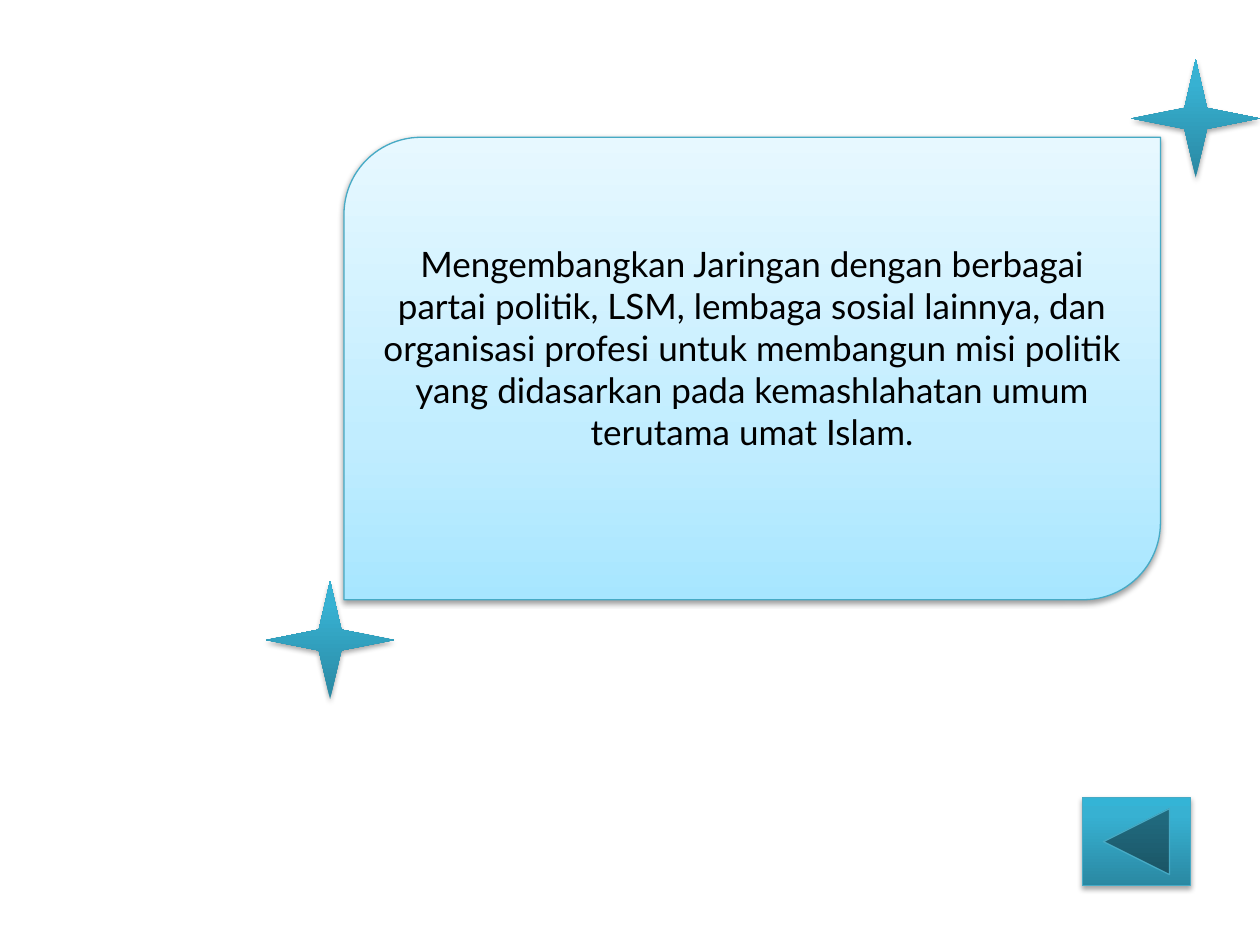
import pptx
import pptx.util
import pptx.oxml
import pptx.oxml.ns
import pptx.dml.color
import pptx.enum.shapes
import pptx.enum.text
from lxml import etree

Inches, Pt = pptx.util.Inches, pptx.util.Pt
RGB = pptx.dml.color.RGBColor.from_string
KIND = pptx.enum.shapes.MSO_SHAPE
qn = pptx.oxml.ns.qn

# Content
TEXT = (
    "Mengembangkan Jaringan dengan berbagai partai politik, LSM, "
    "lembaga sosial lainnya, dan organisasi profesi untuk membangun "
    "misi politik yang didasarkan pada kemashlahatan umum terutama "
    "umat Islam."
)
COLORS = {
    "text": "000000", "line": "46AAC5", "shadow": "000000",
    "sky": "A7E6FF", "pale": "C1EDFF", "ice": "E7F8FF",
    "deep": "2A88A2", "teal": "37B1D2", "aqua": "34B4D6",
}
# Looks: gradient stops from bottom to top, shadow opacity and distance
LIGHT = {"stops": [(0, "sky"), (35, "pale"), (100, "ice")],
         "alpha": 38, "dist": 1.6}
DARK = {"stops": [(0, "deep"), (80, "teal"), (100, "aqua")],
        "alpha": 35, "dist": 1.8}

# Kind, box (left, top, width, height), look, outlined
STAR = (1.02, 0.94)
PARTS = [
    (KIND.ROUND_2_DIAG_RECTANGLE, (2.73, 1.09, 6.48, 3.67), LIGHT, True),
    (KIND.ACTION_BUTTON_BACK_OR_PREVIOUS, (8.59, 6.33, 0.86, 0.7), DARK, True),
    (KIND.STAR_4_POINT, (2.11, 4.61, *STAR), DARK, False),
    (KIND.STAR_4_POINT, (8.98, 0.47, *STAR), DARK, False),
]


def tint(node, name, alpha=None):
    """Add a colour element, with opacity in percent if given."""
    color = etree.SubElement(node, qn("a:srgbClr"), val=COLORS[name])
    if alpha is not None:
        etree.SubElement(color, qn("a:alpha"), val=str(alpha * 1000))


def paint(shape, look):
    """Give a shape its upward gradient and its shadow below."""
    shape.fill.gradient()
    shape.fill.gradient_angle = 90
    props = shape._element.spPr
    stops = props.find(qn("a:gradFill")).find(qn("a:gsLst"))
    for old in list(stops):
        stops.remove(old)
    for pos, name in look["stops"]:
        tint(etree.SubElement(stops, qn("a:gs"), pos=str(pos * 1000)), name)

    shape.shadow.inherit = False
    shade = etree.SubElement(
        props.find(qn("a:effectLst")), qn("a:outerShdw"),
        blurRad=str(Pt(3.1)), dist=str(Pt(look["dist"])),
        dir="5400000", rotWithShape="0")
    tint(shade, "shadow", look["alpha"])


def write(shape, text):
    """Set centred text, raised by one line's height."""
    frame = shape.text_frame
    frame.word_wrap = True
    frame.vertical_anchor = pptx.enum.text.MSO_ANCHOR.MIDDLE
    frame.margin_bottom = Inches(0.38)
    para = frame.paragraphs[0]
    para.alignment = pptx.enum.text.PP_ALIGN.CENTER
    run = para.add_run()
    run.text = text
    run.font.name = "Lato"
    run.font.size = Pt(20)
    run.font.color.rgb = RGB(COLORS["text"])


def main():
    deck = pptx.Presentation()
    deck.slide_width, deck.slide_height = Inches(10), Inches(7.5)
    slide = deck.slides.add_slide(deck.slide_layouts[6])

    # Card, back button and stars
    for kind, box, look, edge in PARTS:
        shape = slide.shapes.add_shape(kind, *map(Inches, box))
        paint(shape, look)
        if edge:
            shape.line.color.rgb = RGB(COLORS["line"])
            shape.line.width = Pt(0.75)
        else:
            shape.line.fill.background()
        if look is LIGHT:
            write(shape, TEXT)

    deck.save("out.pptx")


if __name__ == "__main__":
    main()
